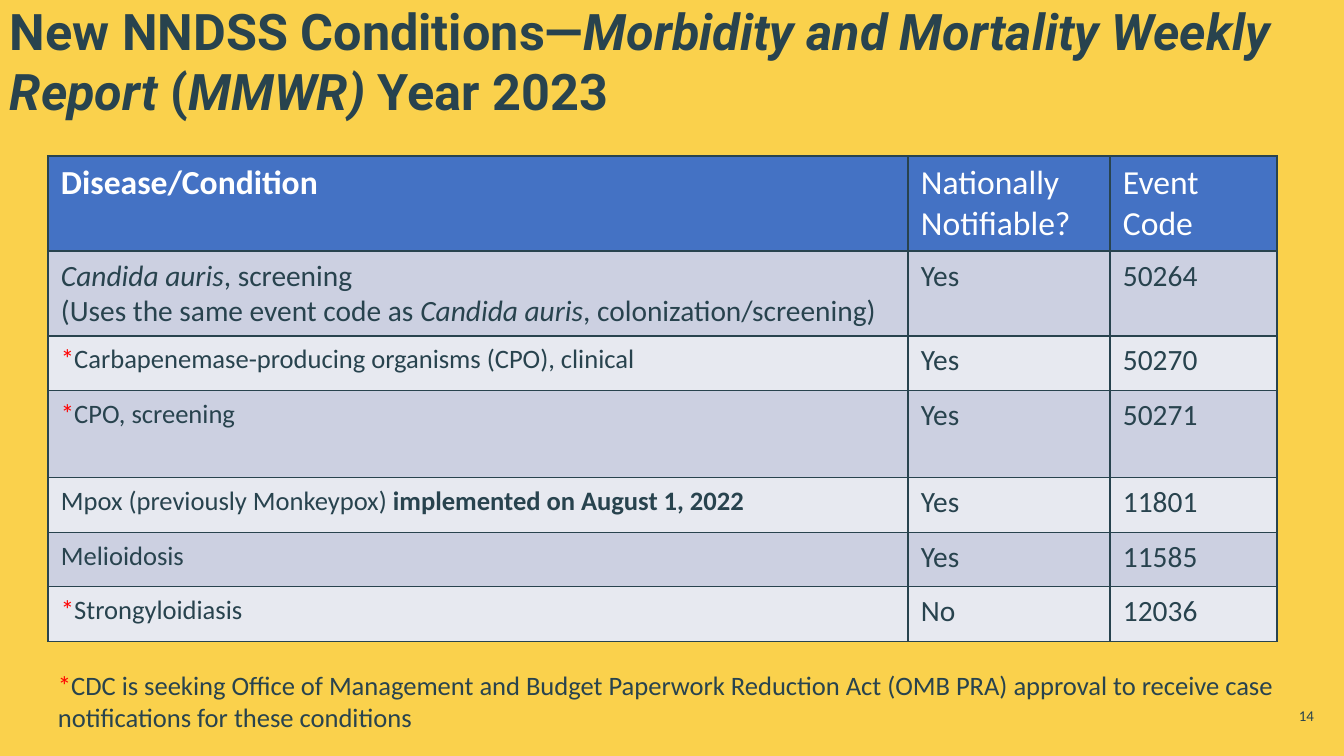
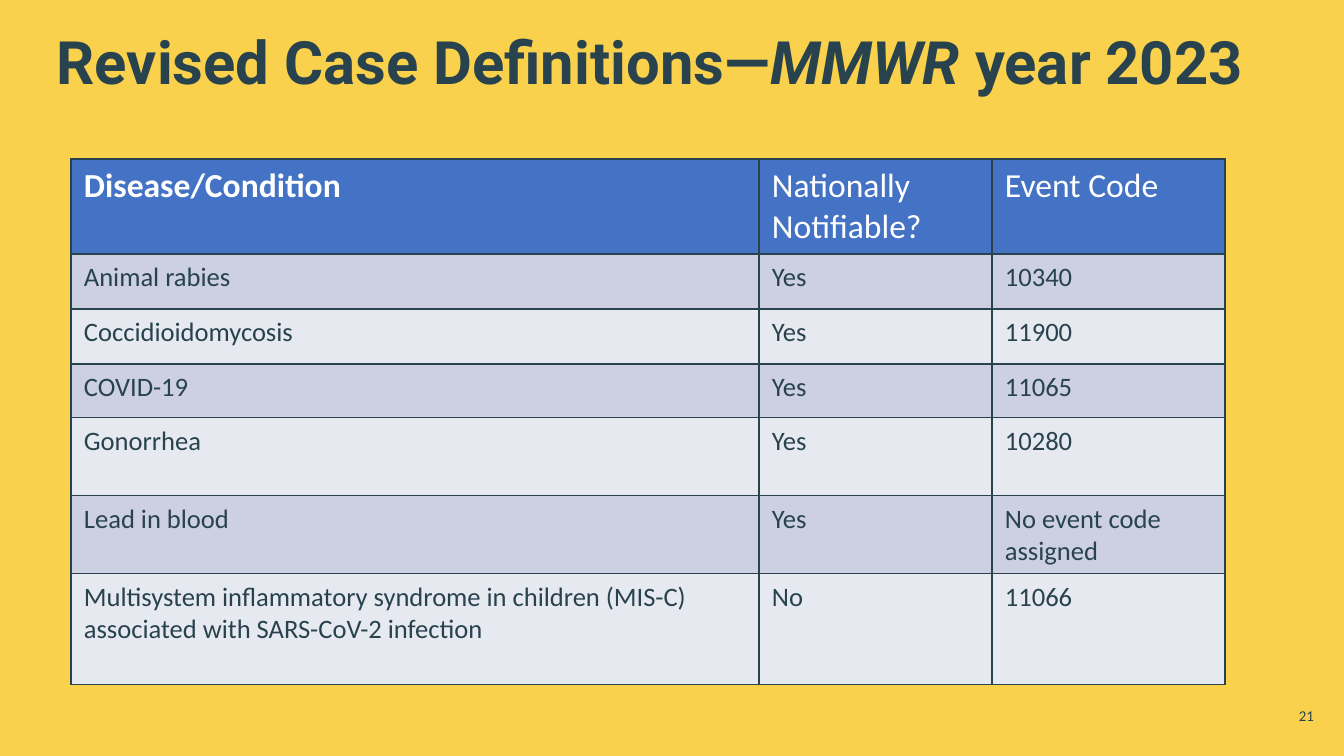
from dataclasses import dataclass
from typing import NamedTuple, Optional

from lxml import etree
from pptx import Presentation
from pptx.dml.color import RGBColor
from pptx.enum import text as t
from pptx.oxml import ns
from pptx import util as u

# Shared look
PX = u.Inches(1) / 100.8
YELLOW = RGBColor(0xFA, 0xD1, 0x4C)
SLATE = RGBColor(0x28, 0x43, 0x4E)
BLUE = RGBColor(0x44, 0x72, 0xC4)
BAND_DARK = RGBColor(0xCC, 0xD0, 0xE1)
BAND_LIGHT = RGBColor(0xE7, 0xE9, 0xF0)
WHITE = RGBColor(0xFF, 0xFF, 0xFF)
RED = RGBColor(0xFF, 0x00, 0x00)
TITLE_FONT, BODY_FONT = "Roboto", "Calibri"
HEADER_HEIGHT, HEADER_SIZE, BODY_SIZE = 95, 24, 19
HEADINGS = ("Disease/Condition", "Nationally Notifiable?", "Event Code")


class Run(NamedTuple):
    text: str
    italic: bool = False
    bold: bool = False
    color: Optional[RGBColor] = None


Line = list[Run]
STAR = Run("*", color=RED)


class Style(NamedTuple):
    size: float
    color: RGBColor = SLATE
    font: str = BODY_FONT
    bold: bool = False
    align: t.PP_ALIGN = t.PP_ALIGN.LEFT


class Box(NamedTuple):
    left: int
    top: int
    width: int
    height: int


@dataclass
class Condition:
    name: list[Line]
    notifiable: str
    code: str
    height: int
    name_size: float = BODY_SIZE


@dataclass
class ConditionSlide:
    title: Line
    title_style: Style
    number: int
    left: int
    top: int
    columns: tuple[int, int, int]
    value_size: float
    conditions: list[Condition]
    footnote: Optional[Line] = None


TITLE_BOX = Box(0, 0, 1300, 121)
NUMBER_BOX = Box(1256, 696, 68, 40)
FOOTNOTE_BOX = Box(48, 664, 1254, 80)


def px(length: float) -> int:
    return u.Emu(round(length * PX))


def write(frame, lines: list[Line], style: Style) -> None:
    """Fill a text frame with one paragraph per line."""
    frame.word_wrap = True
    for index, line in enumerate(lines):
        paragraph = frame.add_paragraph() if index else frame.paragraphs[0]
        paragraph.alignment = style.align
        font = paragraph.font
        font.name, font.size, font.bold = style.font, u.Pt(style.size), style.bold
        font.color.rgb = style.color
        for part in line:
            run = paragraph.add_run()
            run.text = part.text
            if part.italic:
                run.font.italic = True
            if part.bold:
                run.font.bold = True
            if part.color is not None:
                run.font.color.rgb = part.color


def add_text(slide, box: Box, line: Line, style: Style,
             anchor: t.MSO_ANCHOR = t.MSO_ANCHOR.MIDDLE) -> None:
    frame = slide.shapes.add_textbox(*map(px, box)).text_frame
    frame.vertical_anchor = anchor
    write(frame, [line], style)


def fill_cell(cell, lines: list[Line], style: Style, fill: RGBColor) -> None:
    cell.margin_left = cell.margin_right = px(13)
    cell.margin_top = cell.margin_bottom = px(7)
    write(cell.text_frame, lines, style)
    # Borders come before the fill in the cell properties
    properties = cell._tc.get_or_add_tcPr()
    for side in ("lnL", "lnR", "lnT", "lnB"):
        border = etree.SubElement(properties, ns.qn(f"a:{side}"), w=str(u.Pt(1)))
        solid = etree.SubElement(border, ns.qn("a:solidFill"))
        etree.SubElement(solid, ns.qn("a:srgbClr"), val=str(SLATE))
    cell.fill.solid()
    cell.fill.fore_color.rgb = fill


def add_conditions(slide, page: ConditionSlide) -> None:
    heights = [HEADER_HEIGHT] + [c.height for c in page.conditions]
    box = Box(page.left, page.top, sum(page.columns), sum(heights))
    table = slide.shapes.add_table(
        len(heights), len(page.columns), *map(px, box)).table
    table.first_row = table.horz_banding = False
    for column, width in zip(table.columns, page.columns):
        column.width = px(width)
    for row, height in zip(table.rows, heights):
        row.height = px(height)

    for index, heading in enumerate(HEADINGS):
        style = Style(HEADER_SIZE, WHITE, bold=index == 0)
        fill_cell(table.cell(0, index), [[Run(heading)]], style, BLUE)
    for row, condition in enumerate(page.conditions, start=1):
        fill = BAND_DARK if row % 2 else BAND_LIGHT
        fill_cell(table.cell(row, 0), condition.name,
                  Style(condition.name_size), fill)
        for column, value in enumerate((condition.notifiable, condition.code), 1):
            fill_cell(table.cell(row, column), [[Run(value)]],
                      Style(page.value_size), fill)


def add_page(prs, page: ConditionSlide) -> None:
    slide = prs.slides.add_slide(prs.slide_layouts[6])
    add_text(slide, TITLE_BOX, page.title, page.title_style)
    add_conditions(slide, page)
    add_text(slide, NUMBER_BOX, [Run(str(page.number))],
             Style(10.7, align=t.PP_ALIGN.RIGHT))
    if page.footnote:
        add_text(slide, FOOTNOTE_BOX, page.footnote, Style(BODY_SIZE),
                 t.MSO_ANCHOR.TOP)


# Content
NEW_CONDITIONS = ConditionSlide(
    title=[Run("New NNDSS Conditions—"),
           Run("Morbidity and Mortality Weekly Report", italic=True),
           Run(" ("), Run("MMWR)", italic=True), Run(" Year 2023")],
    title_style=Style(36, font=TITLE_FONT, bold=True),
    number=14, left=48, top=156, columns=(860, 202, 167), value_size=21,
    conditions=[
        Condition([[Run("Candida auris", italic=True), Run(", screening")],
                   [Run("(Uses the same event code as "),
                    Run("Candida auris", italic=True),
                    Run(", colonization/screening)")]],
                  "Yes", "50264", 85, name_size=21),
        Condition([[STAR, Run("Carbapenemase-producing organisms (CPO), clinical")]],
                  "Yes", "50270", 55),
        Condition([[STAR, Run("CPO, screening")]], "Yes", "50271", 87),
        Condition([[Run("Mpox (previously Monkeypox) "),
                    Run("implemented on August 1, 2022", bold=True)]],
                  "Yes", "11801", 55),
        Condition([[Run("Melioidosis")]], "Yes", "11585", 54),
        Condition([[STAR, Run("Strongyloidiasis")]], "No", "12036", 55),
    ],
    footnote=[STAR, Run("CDC is seeking Office of Management and Budget Paperwork "
                        "Reduction Act (OMB PRA) approval to receive case "
                        "notifications for these conditions")],
)

REVISED_DEFINITIONS = ConditionSlide(
    title=[Run("Revised Case Definitions—"), Run("MMWR", italic=True),
           Run(" year 2023")],
    title_style=Style(42.7, font=TITLE_FONT, bold=True, align=t.PP_ALIGN.CENTER),
    number=21, left=71, top=159, columns=(688, 233, 233), value_size=BODY_SIZE,
    conditions=[
        Condition([[Run("Animal rabies")]], "Yes", "10340", 55),
        Condition([[Run("Coccidioidomycosis")]], "Yes", "11900", 55),
        Condition([[Run("COVID-19")]], "Yes", "11065", 54),
        Condition([[Run("Gonorrhea")]], "Yes", "10280", 78),
        Condition([[Run("Lead in blood")]], "Yes", "No event code assigned", 78),
        Condition([[Run("Multisystem inflammatory syndrome in children (MIS-C) "
                        "associated with SARS-CoV-2 infection")]],
                  "No", "11066", 111),
    ],
)


def main() -> None:
    prs = Presentation()
    prs.slide_width, prs.slide_height = px(1344), px(756)
    background = prs.slide_master.background.fill
    background.solid()
    background.fore_color.rgb = YELLOW
    for page in (NEW_CONDITIONS, REVISED_DEFINITIONS):
        add_page(prs, page)
    prs.save("out.pptx")


if __name__ == "__main__":
    main()
